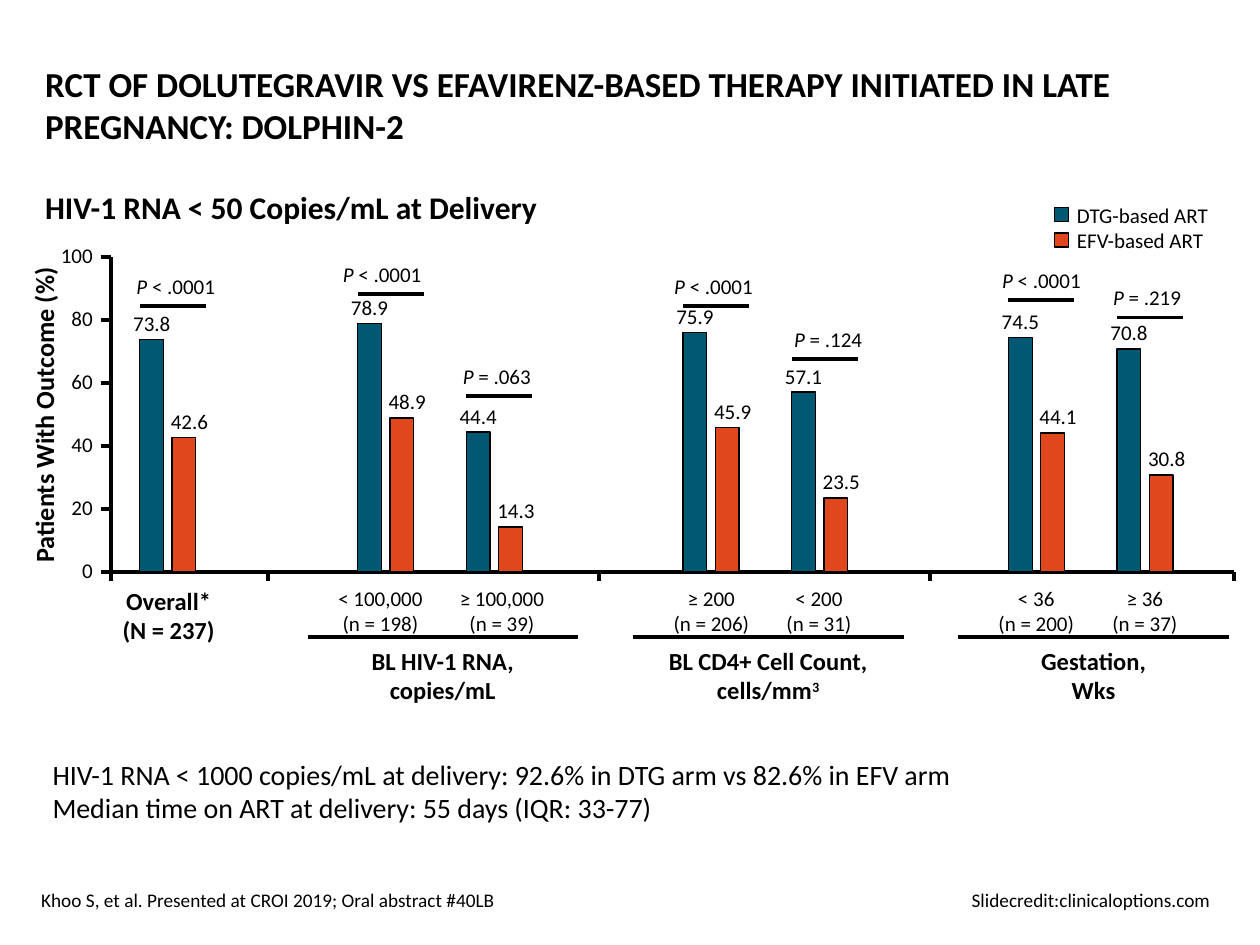
from dataclasses import dataclass

from lxml import etree
from pptx import Presentation, util as u
from pptx.dml.color import RGBColor
from pptx.enum import shapes, text
from pptx.oxml.ns import qn

COLORS = {"text": "000000", "dtg": "015873", "efv": "E1471D"}
FONT = "Calibri"
LEFT, CENTER, RIGHT = text.PP_ALIGN.LEFT, text.PP_ALIGN.CENTER, text.PP_ALIGN.RIGHT

# All positions and lengths below are in centimetres.
AXIS_LEFT, AXIS_RIGHT, AXIS_TOP, BASELINE = 2.24, 24.87, 5.18, 11.53
PERCENT_HEIGHT = (BASELINE - AXIS_TOP) / 100
BAR_WIDTH, BAR_STEP = 0.48, 0.65
GROUP_LEFT, GROUP_STEP, PAIR_STEP = 7.21, 6.56, 2.19


@dataclass
class Run:
    text: str
    italic: bool = False
    superscript: bool = False


@dataclass
class Pair:
    """The two bars of one subgroup with their P value."""
    dtg: float
    efv: float
    p_value: str
    p_left: float
    p_line_y: float
    label: tuple[str, ...] = ()
    label_center: float = 0


@dataclass
class Group:
    title: list[str | list[Run]]
    pairs: tuple[Pair, Pair]


OVERALL = Pair(73.8, 42.6, "< .0001", 2.29, 6.17)
GROUPS = [
    Group(["BL HIV-1 RNA,", "copies/mL"], (
        Pair(78.9, 48.9, "< .0001", 6.45, 5.92, ("< 100,000", "(n = 198)"), 7.67),
        Pair(44.4, 14.3, "= .063", 8.76, 7.98, ("≥ 100,000", "(n = 39)"), 10.12))),
    Group([[Run("BL CD4+ Cell Count, cells/mm"), Run("3", superscript=True)]], (
        Pair(75.9, 45.9, "< .0001", 13.13, 6.17, ("≥ 200", "(n = 206)"), 14.34),
        Pair(57.1, 23.5, "= .124", 15.44, 7.24, ("< 200", "(n = 31)"), 16.51))),
    Group(["Gestation,", "Wks"], (
        Pair(74.5, 44.1, "< .0001", 19.74, 6.05, ("< 36", "(n = 200)"), 20.89),
        Pair(70.8, 30.8, "= .219", 21.87, 6.4, ("≥ 36", "(n = 37)"), 23.08))),
]


def color(name: str) -> RGBColor:
    return RGBColor.from_string(COLORS[name])


def add_text(slide, left: float, top: float, width: float, height: float, lines,
             size: float = 12, bold: bool = False, align=LEFT, middle: bool = False,
             wrap: bool = True, right_tab: float | None = None):
    """Add a text box; each line is a string or a list of runs."""
    box = slide.shapes.add_textbox(*map(u.Cm, (left, top, width, height)))
    frame = box.text_frame
    frame.word_wrap = wrap
    frame.vertical_anchor = text.MSO_ANCHOR.MIDDLE if middle else text.MSO_ANCHOR.TOP
    for index, line in enumerate(lines):
        paragraph = frame.add_paragraph() if index else frame.paragraphs[0]
        for part in [Run(line)] if isinstance(line, str) else line:
            run = paragraph.add_run()
            run.text = part.text
            if part.italic:
                run.font.italic = True
            if part.superscript:
                run._r.get_or_add_rPr().set("baseline", "30000")
        paragraph.alignment = align
        if right_tab is not None:
            tabs = etree.SubElement(paragraph._p.get_or_add_pPr(), qn("a:tabLst"))
            etree.SubElement(tabs, qn("a:tab"), pos=str(u.Cm(right_tab)), algn="r")
        font = paragraph.font
        font.name, font.size, font.bold = FONT, u.Pt(size), bold
        font.color.rgb = color("text")
    return box


def set_line(line) -> None:
    line.color.rgb = color("text")
    line.width = u.Pt(2.25)


def add_line(slide, x1: float, y1: float, x2: float, y2: float) -> None:
    connector = slide.shapes.add_connector(
        shapes.MSO_CONNECTOR.STRAIGHT, *map(u.Cm, (x1, y1, x2, y2)))
    set_line(connector.line)
    etree.SubElement(connector._element.spPr, qn("a:effectLst"))


def add_block(slide, left: float, top: float, width: float, height: float,
              fill: str) -> None:
    """Add a filled rectangle with a hairline outline."""
    shape = slide.shapes.add_shape(
        shapes.MSO_SHAPE.RECTANGLE, *map(u.Cm, (left, top, width, height)))
    shape.shadow.inherit = False
    shape.fill.solid()
    shape.fill.fore_color.rgb = color(fill)
    shape.line.color.rgb = color("text")
    shape.line.width = u.Pt(0)


def add_pair(slide, pair: Pair, left: float) -> None:
    bars = (("dtg", pair.dtg, left, 0), ("efv", pair.efv, left + BAR_STEP, 0.11))
    for name, value, bar_left, label_shift in bars:
        height = value * PERCENT_HEIGHT
        top = BASELINE - height
        add_block(slide, bar_left, top, BAR_WIDTH, height, name)
        label_left = bar_left + BAR_WIDTH / 2 - 0.72 + label_shift
        add_text(slide, label_left, top - 0.71, 1.44, 0.76, [f"{value:.1f}"], align=CENTER)
    add_line(slide, left, pair.p_line_y, left + 1.33, pair.p_line_y)
    add_text(slide, pair.p_left, pair.p_line_y - 0.78, 2.51, 0.76,
             [[Run("P ", italic=True), Run(pair.p_value)]], align=CENTER)
    if pair.label:
        add_text(slide, pair.label_center - 1.3, 11.68, 2.6, 1.27, pair.label, align=CENTER)


def add_axes(slide) -> None:
    builder = slide.shapes.build_freeform(u.Cm(AXIS_LEFT), u.Cm(AXIS_TOP))
    builder.add_line_segments([(u.Cm(AXIS_LEFT), u.Cm(BASELINE)),
                               (u.Cm(AXIS_RIGHT), u.Cm(BASELINE))], close=False)
    axes = builder.convert_to_shape()
    axes.shadow.inherit = False
    axes.fill.background()
    set_line(axes.line)
    for value in range(0, 101, 20):
        y = BASELINE - value * PERCENT_HEIGHT
        add_line(slide, 2.03, y, AXIS_LEFT, y)
        add_text(slide, 0.85, y - 0.41, 1.27, 0.76, [str(value)], align=RIGHT)
    for x in (AXIS_LEFT, 5.41, 12.07, 18.75, AXIS_RIGHT):
        add_line(slide, x, BASELINE, x, 11.71)
    axis_title = add_text(slide, -2.39, 7.87, 6.55, 0.89, ["Patients With Outcome (%)"],
                          size=15, bold=True, wrap=False)
    axis_title.rotation = 270


def add_legend(slide) -> None:
    for index, name in enumerate(("dtg", "efv")):
        add_block(slide, 21.26, 4.19 + index * 0.51, 0.28, 0.28, name)
    add_text(slide, 21.46, 3.96, 3.2, 1.27, ["DTG-based ART", "EFV-based ART"])


def add_group(slide, group: Group, index: int) -> None:
    shift = index * GROUP_STEP
    for position, pair in enumerate(group.pairs):
        add_pair(slide, pair, GROUP_LEFT + shift + position * PAIR_STEP)
    add_line(slide, 6.2 + shift, 12.85, 11.66 + shift, 12.85)
    add_text(slide, 5.89 + shift, 12.9, 6.07, 1.45, group.title,
             size=14, bold=True, align=CENTER)


def main() -> None:
    presentation = Presentation()
    presentation.slide_width, presentation.slide_height = u.Cm(25.4), u.Cm(19.05)
    slide = presentation.slides.add_slide(presentation.slide_layouts[6])

    add_text(slide, 0.66, 0.91, 24.2, 2.39,
             ["RCT OF DOLUTEGRAVIR VS EFAVIRENZ-BASED THERAPY INITIATED IN LATE "
              "PREGNANCY: DOLPHIN-2"], size=20, bold=True, middle=True)
    add_text(slide, 0.66, 3.66, 24.2, 1, ["HIV-1 RNA < 50 Copies/mL at Delivery"],
             size=18, bold=True)
    add_axes(slide)
    add_legend(slide)
    add_pair(slide, OVERALL, 2.82)
    add_text(slide, 2.1, 11.68, 2.6, 1.45, ["Overall*", "(N = 237)"],
             size=14, bold=True, align=CENTER)
    for index, group in enumerate(GROUPS):
        add_group(slide, group, index)
    add_text(slide, 0.81, 15.14, 23.98, 1.63,
             ["HIV-1 RNA < 1000 copies/mL at delivery: 92.6% in DTG arm vs 82.6% in EFV arm",
              "Median time on ART at delivery: 55 days (IQR: 33-77)"], size=16)
    add_text(slide, 0.58, 17.63, 24.2, 1.02,
             ["Khoo S, et al. Presented at CROI 2019; Oral abstract #40LB"
              "\tSlidecredit:clinicaloptions.com"], size=11, middle=True, right_tab=23.57)
    presentation.save("out.pptx")


if __name__ == "__main__":
    main()
